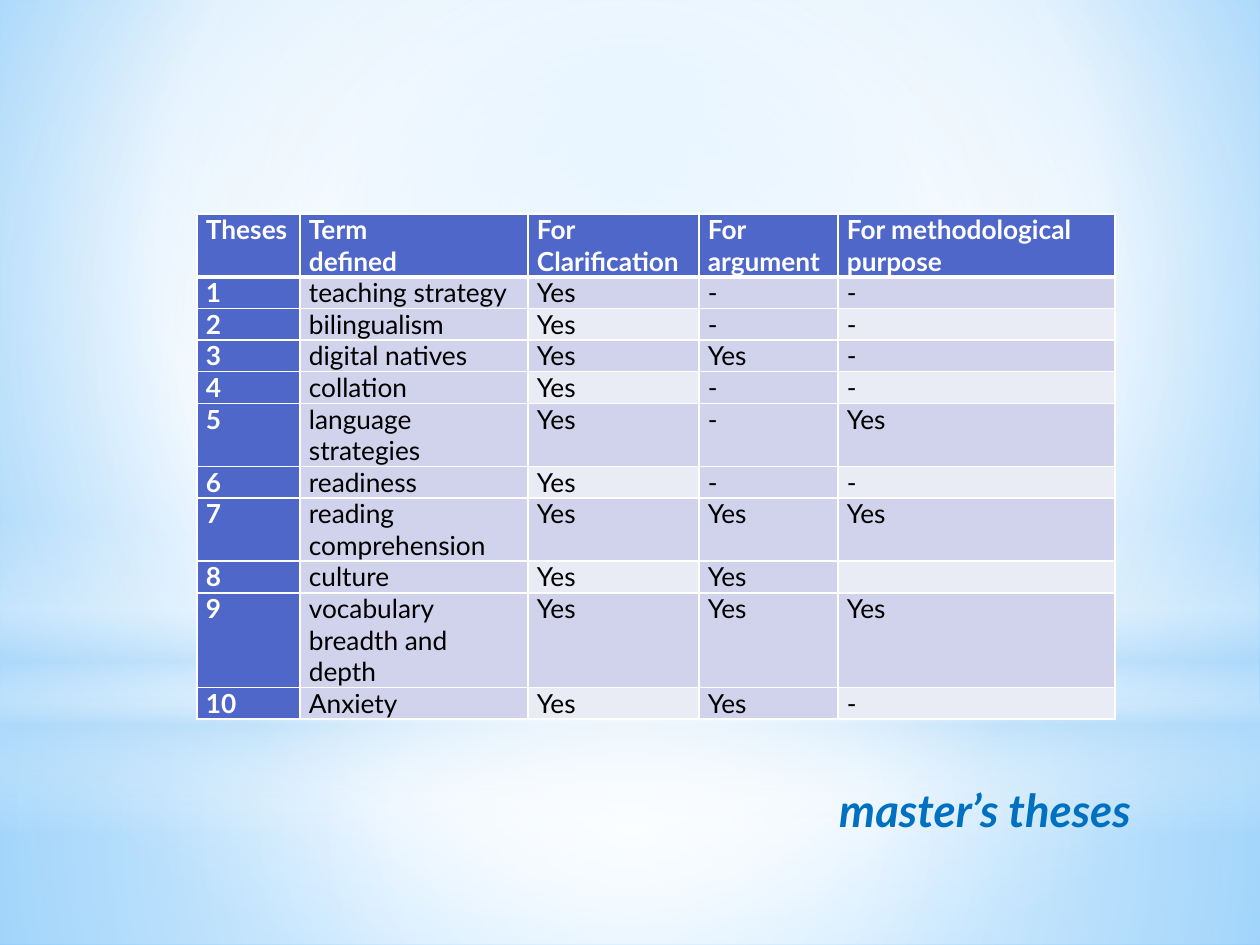
"""Build the slide that tabulates why master's theses define their terms."""
from dataclasses import dataclass

import lxml.etree
import pptx
import pptx.dml.color
import pptx.enum.shapes
import pptx.enum.text
import pptx.oxml.ns
import pptx.util

EMU_PER_PX = 914400 / 126
FONT = "Lato"
COLOURS = {
    "white": "FFFFFF", "black": "000000", "title": "0070C0", "header": "4E67C8",
    "band_dark": "D0D3EB", "band_light": "E9EBF5", "glow": "B4DCFA",
    "sky_inner": "9ED5FF", "sky_outer": "5BB9FF",
}
SHAPE = pptx.enum.shapes.MSO_SHAPE
ALIGN = pptx.enum.text.PP_ALIGN
CENTRE = (50, 50, 50, 50)


@dataclass(frozen=True)
class Stop:
    position: int
    colour: str
    opacity: int = 100


@dataclass(frozen=True)
class Glow:
    top: int
    height: int
    stops: tuple[Stop, ...]
    focus: tuple[int, ...] | None = CENTRE
    outline: SHAPE = SHAPE.RECTANGLE


@dataclass(frozen=True)
class Thesis:
    term: str
    clarification: str = "Yes"
    argument: str = "-"
    method: str = "-"
    lines: int = 1


SKY = (Stop(0, "sky_inner"), Stop(60, "white"), Stop(100, "sky_outer"))
GLOWS = (
    Glow(703, 242, (Stop(0, "white", 91), Stop(37, "white", 76), Stop(100, "glow", 79))),
    Glow(0, 703, (Stop(0, "white", 89), Stop(48, "white", 62), Stop(100, "glow", 79))),
    Glow(519, 315, (Stop(0, "white", 0), Stop(29, "white", 30), Stop(45, "glow", 40),
                    Stop(55, "white", 26), Stop(65, "glow", 60), Stop(100, "white", 0)),
         focus=None),
    Glow(221, 703, (Stop(0, "white"), Stop(56, "white", 0)), outline=SHAPE.OVAL),
)
HEADINGS = ("Theses", "Term\ndefined", "For\nClarification", "For\nargument",
            "For methodological\npurpose")
COLUMN_WIDTHS = (103, 228, 171, 139, 277)
LINE_HEIGHT = 31
THESES = (
    Thesis("teaching strategy"),
    Thesis("bilingualism"),
    Thesis("digital natives", argument="Yes"),
    Thesis("collation"),
    Thesis("language strategies", method="Yes", lines=2),
    Thesis("readiness"),
    Thesis("reading comprehension", argument="Yes", method="Yes", lines=2),
    Thesis("culture", argument="Yes", method=""),
    Thesis("vocabulary breadth and depth", argument="Yes", method="Yes", lines=3),
    Thesis("Anxiety", argument="Yes"),
)


def px(length: int) -> pptx.util.Emu:
    return pptx.util.Emu(round(length * EMU_PER_PX))


def rgb(name: str) -> pptx.dml.color.RGBColor:
    return pptx.dml.color.RGBColor.from_string(COLOURS[name])


def add_child(parent, tag: str, **attributes):
    return lxml.etree.SubElement(parent, pptx.oxml.ns.qn(tag),
                                 {name: str(value) for name, value in attributes.items()})


def apply_gradient(owner, fill, stops: tuple[Stop, ...], focus: tuple[int, ...] | None) -> None:
    fill.solid()
    solid = next(owner.iter(pptx.oxml.ns.qn("a:solidFill")))
    gradient = add_child(solid.getparent(), "a:gradFill", rotWithShape=1)
    solid.getparent().replace(solid, gradient)
    stop_list = add_child(gradient, "a:gsLst")
    for stop in stops:
        mark = add_child(stop_list, "a:gs", pos=stop.position * 1000)
        colour = add_child(mark, "a:srgbClr", val=COLOURS[stop.colour])
        if stop.opacity < 100:
            add_child(colour, "a:alpha", val=stop.opacity * 1000)
    if focus is None:
        add_child(gradient, "a:lin", ang=5400000, scaled=0)
    else:
        edges = {side: inset * 1000 for side, inset in zip("ltrb", focus)}
        add_child(add_child(gradient, "a:path", path="circle"), "a:fillToRect", **edges)


def write_text(frame, text: str, *, size: int, colour: str, bold: bool = False,
               italic: bool = False, align: ALIGN = ALIGN.LEFT) -> None:
    frame.word_wrap = True
    for index, line in enumerate(text.split("\n")):
        paragraph = frame.add_paragraph() if index else frame.paragraphs[0]
        paragraph.alignment = align
        if not line:
            add_child(paragraph._p, "a:endParaRPr", sz=size * 100)
            continue
        run = paragraph.add_run()
        run.text = line
        run.font.name = FONT
        run.font.size = pptx.util.Pt(size)
        run.font.bold = bold
        run.font.italic = italic
        run.font.color.rgb = rgb(colour)


def add_glow(slide, glow: Glow) -> None:
    shape = slide.shapes.add_shape(glow.outline, 0, px(glow.top), px(1260), px(glow.height))
    shape.shadow.inherit = False
    apply_gradient(shape.element, shape.fill, glow.stops, glow.focus)
    shape.line.fill.background()


def format_cell(cell, fill: str, top: int, bottom: int) -> None:
    cell.margin_left = cell.margin_right = px(9)
    cell.margin_top = cell.margin_bottom = 0
    properties = cell._tc.get_or_add_tcPr()
    for side, points in (("L", 1), ("R", 1), ("T", top), ("B", bottom)):
        border = add_child(properties, f"a:ln{side}", w=pptx.util.Pt(points))
        add_child(add_child(border, "a:solidFill"), "a:srgbClr", val=COLOURS["white"])
    cell.fill.solid()
    cell.fill.fore_color.rgb = rgb(fill)


def add_theses_table(slide) -> None:
    rows = [HEADINGS] + [
        (str(number), thesis.term, thesis.clarification, thesis.argument, thesis.method)
        for number, thesis in enumerate(THESES, 1)
    ]
    line_counts = [2] + [thesis.lines for thesis in THESES]
    table = slide.shapes.add_table(
        len(rows), len(HEADINGS), px(197), px(214), px(sum(COLUMN_WIDTHS)),
        px(sum(line_counts) * LINE_HEIGHT)).table
    for column, width in zip(table.columns, COLUMN_WIDTHS):
        column.width = px(width)
    for row_index, texts in enumerate(rows):
        table.rows[row_index].height = px(line_counts[row_index] * LINE_HEIGHT)
        for column_index, text in enumerate(texts):
            cell = table.cell(row_index, column_index)
            heading = row_index == 0 or column_index == 0
            dark = row_index % 2 == 1 or column_index in (1, 3)
            fill = "header" if heading else "band_dark" if dark else "band_light"
            format_cell(cell, fill, 3 if row_index == 1 else 1, 3 if row_index == 0 else 1)
            justified = row_index > 0 and column_index > 1
            write_text(cell.text_frame, text, size=15, bold=heading,
                       colour="white" if heading else "black",
                       align=ALIGN.JUSTIFY if justified else ALIGN.LEFT)


def place_title(slide) -> None:
    title = slide.shapes.title
    title.left, title.top, title.width, title.height = px(247), px(770), px(897), px(79)
    title.text_frame.auto_size = pptx.enum.text.MSO_AUTO_SIZE.NONE
    title.text_frame.vertical_anchor = pptx.enum.text.MSO_ANCHOR.MIDDLE
    write_text(title.text_frame, "master’s theses", size=26, colour="title",
               bold=True, italic=True, align=ALIGN.RIGHT)
    title.element.getparent().append(title.element)


def main() -> None:
    presentation = pptx.Presentation()
    presentation.slide_width, presentation.slide_height = px(1260), px(945)
    slide = presentation.slides.add_slide(presentation.slide_layouts[5])
    apply_gradient(slide.element, slide.background.fill, SKY, (20, 10, 20, 60))
    for glow in GLOWS:
        add_glow(slide, glow)
    place_title(slide)
    add_theses_table(slide)
    presentation.save("out.pptx")


if __name__ == "__main__":
    main()
